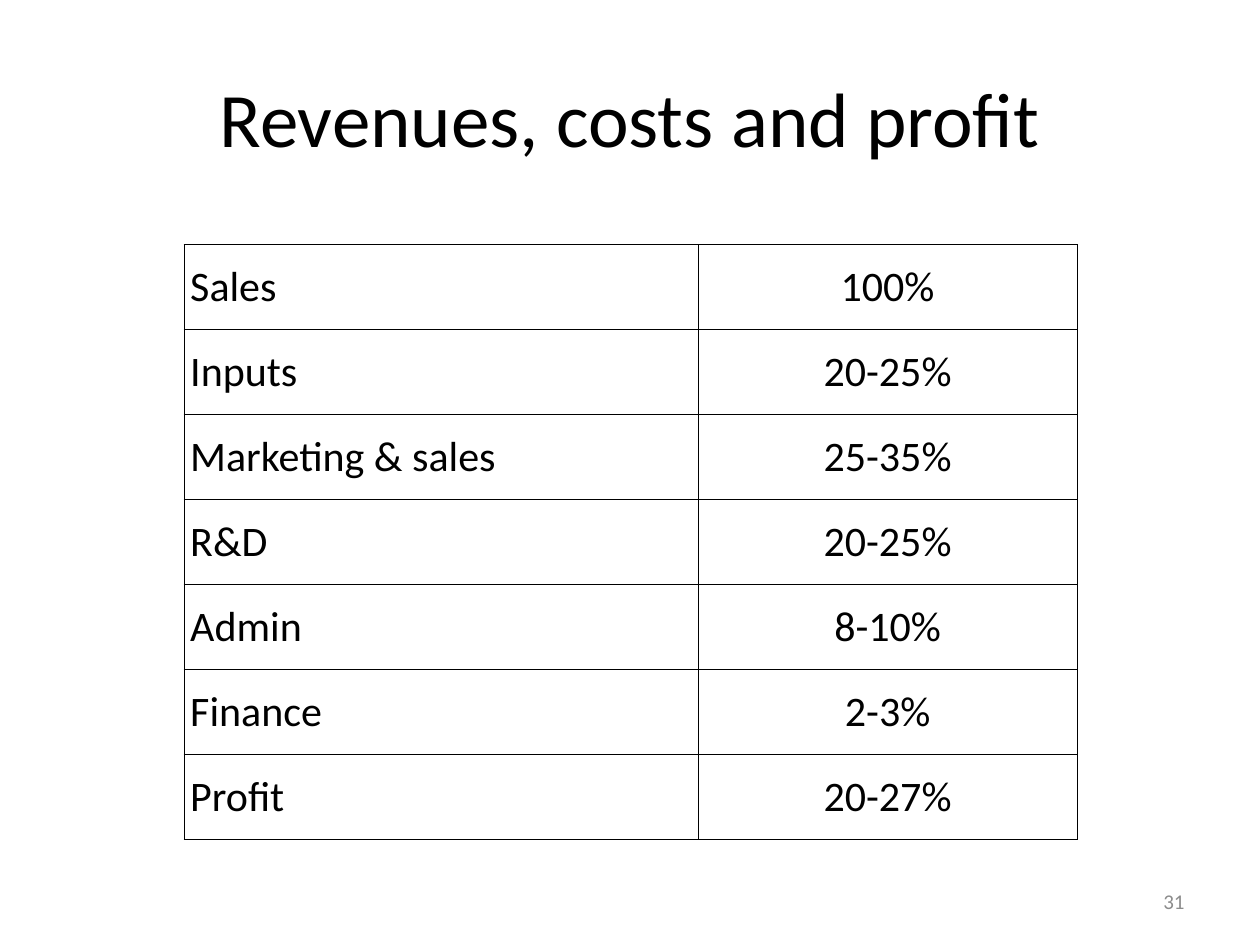
from dataclasses import dataclass, field
from typing import Any

from lxml import etree
from pptx import Presentation
from pptx import util as u
from pptx.dml.color import RGBColor
from pptx.enum import text
from pptx.oxml.ns import qn

COLORS = {"ink": "000000", "muted": "8C8C8C", "paper": "FFFFFF"}
SHARES = [
    ("Sales", "100%"),
    ("Inputs", "20-25%"),
    ("Marketing & sales", "25-35%"),
    ("R&D", "20-25%"),
    ("Admin", "8-10%"),
    ("Finance", "2-3%"),
    ("Profit", "20-27%"),
]
ALIGN = text.PP_ALIGN
MIDDLE = text.MSO_ANCHOR.MIDDLE


@dataclass
class SlideBuilder:
    """Hold the style and the current slide, and add elements to it."""

    page: Any
    font: str = "Calibri"
    border: float = 0.5
    colors: dict = field(default_factory=lambda: COLORS)

    def add_span(self, frame, words, size, align, color="ink"):
        paragraph = frame.paragraphs[0]
        paragraph.alignment = align
        span = paragraph.add_run()
        span.text = words
        span.font.name = self.font
        span.font.size = u.Pt(size)
        span.font.color.rgb = RGBColor.from_string(self.colors[color])

    def add_text(self, place, words, size, align, color="ink"):
        box = self.page.shapes.add_textbox(*map(u.Inches, place))
        box.text_frame.word_wrap = True
        box.text_frame.vertical_anchor = MIDDLE
        self.add_span(box.text_frame, words, size, align, color)

    def add_borders(self, cell):
        properties = cell._tc.get_or_add_tcPr()
        for index, side in enumerate(("lnL", "lnR", "lnT", "lnB")):
            line = etree.Element(qn(f"a:{side}"), w=str(u.Pt(self.border)))
            fill = etree.SubElement(line, qn("a:solidFill"))
            etree.SubElement(fill, qn("a:srgbClr"), val=self.colors["ink"])
            properties.insert(index, line)

    def add_table(self, place, widths, rows, size, aligns):
        frame = self.page.shapes.add_table(len(rows), len(widths), *map(u.Inches, place))
        table = frame.table
        table.first_row = table.horz_banding = False
        for column, width in zip(table.columns, widths):
            column.width = u.Inches(width)
        for row, values in zip(table.rows, rows):
            row.height = u.Inches(place[3] / len(rows))
            for cell, words, align in zip(row.cells, values, aligns):
                cell.fill.solid()
                cell.fill.fore_color.rgb = RGBColor.from_string(self.colors["paper"])
                cell.margin_left = u.Inches(0.05 if align == ALIGN.LEFT else 0.01)
                cell.margin_right = cell.margin_top = u.Inches(0.01)
                cell.margin_bottom = 0
                cell.vertical_anchor = MIDDLE
                self.add_borders(cell)
                self.add_span(cell.text_frame, words, size, align)


def main():
    deck = Presentation()
    deck.slide_width, deck.slide_height = u.Inches(10), u.Inches(7.5)
    builder = SlideBuilder(deck.slides.add_slide(deck.slide_layouts[6]))
    builder.add_text((0.5, 0.3, 9, 1.25), "Revenues, costs and profit", 44, ALIGN.CENTER)
    builder.add_table(
        (1.46, 1.94, 7.09, 4.72), (4.08, 3.01), SHARES, 24, (ALIGN.LEFT, ALIGN.CENTER)
    )
    builder.add_text((7.17, 6.95, 2.33, 0.4), "31", 12, ALIGN.RIGHT, "muted")
    deck.save("out.pptx")


if __name__ == "__main__":
    main()
